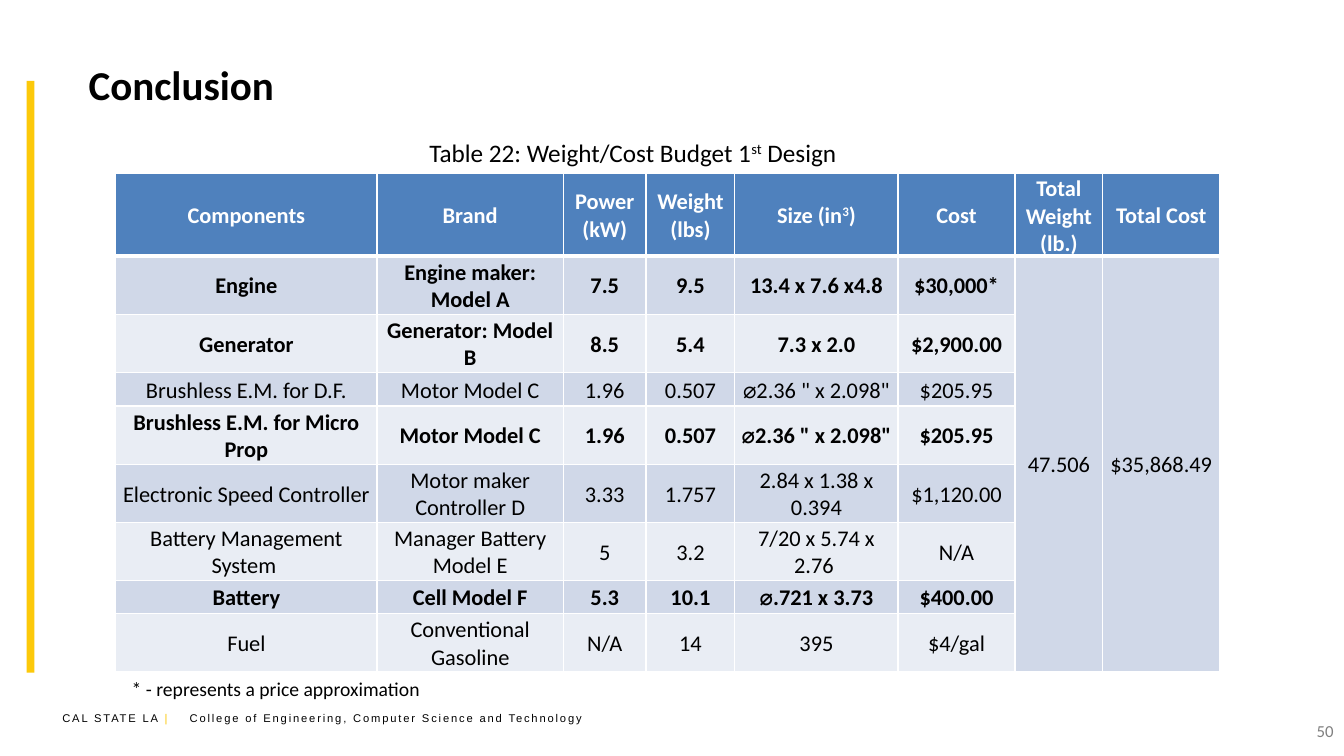
from dataclasses import dataclass
from lxml.etree import SubElement
from pptx import Presentation
from pptx.dml.color import RGBColor
from pptx.enum.shapes import MSO_SHAPE
from pptx.enum.text import MSO_ANCHOR, PP_ALIGN
from pptx.oxml.ns import qn
from pptx.util import Cm, Pt

TITLE = "Conclusion"
CAPTION = "Table 22: Weight/Cost Budget 1^st^ Design"
FOOTNOTE = "* - represents a price approximation"
FOOTER = ["CAL STATE LA ", "|\t", "College of Engineering, Computer Science and Technology"]
PAGE = "50"
HEADERS = ["Components", "Brand", "Power (kW)", "Weight (lbs)", "Size (in^3^)", "Cost",
           "Total Weight (lb.)", "Total Cost"]
COMPONENTS = [
    ["Engine", "Engine maker: Model A", "7.5", "9.5", "13.4 x 7.6 x4.8", "$30,000*"],
    ["Generator", "Generator: Model B", "8.5", "5.4", "7.3 x 2.0", "$2,900.00"],
    ["Brushless E.M. for D.F.", "Motor Model C", "1.96", "0.507", '⌀2.36 " x 2.098"', "$205.95"],
    ["Brushless E.M. for Micro Prop", "Motor Model C", "1.96", "0.507", '⌀2.36 " x 2.098"', "$205.95"],
    ["Electronic Speed Controller", "Motor maker Controller D", "3.33", "1.757", "2.84 x 1.38 x 0.394", "$1,120.00"],
    ["Battery Management System ", "Manager Battery Model E", "5", "3.2", "7/20 x 5.74 x 2.76 ", "N/A"],
    ["Battery", "Cell Model F", "5.3", "10.1", "⌀.721 x 3.73", "$400.00"],
    ["Fuel", "Conventional Gasoline", "N/A", "14", "395", "$4/gal"],
]
TOTALS = ["47.506", "$35,868.49"]
BOLD_COMPONENTS = {"Engine", "Generator", "Brushless E.M. for Micro Prop", "Battery"}
COL_WIDTHS = [6.58, 4.7, 2.08, 2.24, 4.11, 2.95, 2.21, 2.95]
ROW_HEIGHTS = [1.98, 1.47, 1.47, 0.84, 1.47, 1.47, 1.45, 0.84, 1.47]


@dataclass(frozen=True)
class Theme:
    font: str = "Calibri"
    footer_font: str = "Arial"
    ink: str = "000000"
    paper: str = "FFFFFF"
    gold: str = "FCC90A"
    grey: str = "808080"
    header: str = "4F81BD"
    bands: tuple = ("D0D8E8", "E9EDF4")
    title_size: float = 29.3
    caption_size: float = 18
    cell_size: float = 16
    note_size: float = 14
    page_size: float = 12
    footer_size: float = 8


T = Theme()


def style(r, size, color=T.ink, bold=False, font=T.font):
    r.font.name, r.font.size, r.font.bold = font, Pt(size), bold
    r.font.color.rgb = RGBColor.from_string(color)


def write(p, text, size, color=T.ink, bold=False):
    for i, part in enumerate(text.split("^")):
        r = p.add_run()
        r.text = part
        style(r, size, color, bold)
        if i % 2:
            r._r.get_or_add_rPr().set("baseline", "30000")


def add_text(s, left, top, width, height):
    tf = s.shapes.add_textbox(Cm(left), Cm(top), Cm(width), Cm(height)).text_frame
    tf.word_wrap = True
    return tf.paragraphs[0]


def set_borders(cell, top, bottom):
    tcPr = cell._tc.get_or_add_tcPr()
    for side, width in (("L", 1), ("R", 1), ("T", top), ("B", bottom)):
        ln = SubElement(tcPr, qn(f"a:ln{side}"), w=str(Pt(width)))
        SubElement(SubElement(ln, qn("a:solidFill")), qn("a:srgbClr"), val=T.paper)


def fill_cell(cell, row, text, bold):
    is_header = row == 0
    set_borders(cell, 3 if row == 1 else 1, 3 if is_header else 1)
    cell.fill.solid()
    cell.fill.fore_color.rgb = RGBColor.from_string(T.header if is_header else T.bands[(row - 1) % 2])
    cell.margin_left = cell.margin_right = cell.margin_top = Cm(0.05)
    cell.margin_bottom = 0
    cell.vertical_anchor = MSO_ANCHOR.MIDDLE
    p = cell.text_frame.paragraphs[0]
    p.alignment = PP_ALIGN.CENTER
    if text:
        write(p, text, T.cell_size, T.paper if is_header else T.ink, bold)


def add_budget(s):
    table = s.shapes.add_table(len(ROW_HEIGHTS), len(COL_WIDTHS), Cm(2.92), Cm(4.37),
                               Cm(sum(COL_WIDTHS)), Cm(sum(ROW_HEIGHTS))).table
    for col, width in zip(table.columns, COL_WIDTHS):
        col.width = Cm(width)
    for row, height in zip(table.rows, ROW_HEIGHTS):
        row.height = Cm(height)
    blanks = [""] * len(TOTALS)
    rows = [HEADERS] + [c + (blanks if i else TOTALS) for i, c in enumerate(COMPONENTS)]
    for i, values in enumerate(rows):
        for j, text in enumerate(values):
            is_total = j >= len(COMPONENTS[0])
            bold = i == 0 or (values[0] in BOLD_COMPONENTS and not is_total)
            fill_cell(table.cell(i, j), i, text, bold)
    for j in range(len(COMPONENTS[0]), len(HEADERS)):
        table.cell(1, j).merge(table.cell(len(COMPONENTS), j))


def add_footer(s):
    p = add_text(s, 1.32, 17.81, 14.05, 0.61)
    tabs = SubElement(p._p.get_or_add_pPr(), qn("a:tabLst"))
    SubElement(tabs, qn("a:tab"), pos=str(Cm(3.21)), algn="l")
    for text, color in zip(FOOTER, (T.ink, T.gold, T.ink)):
        r = p.add_run()
        r.text = text
        style(r, T.footer_size, color, font=T.footer_font)
        r._r.get_or_add_rPr().set("spc", "130")


def main():
    prs = Presentation()
    prs.slide_width, prs.slide_height = Cm(33.87), Cm(19.05)
    s = prs.slides.add_slide(prs.slide_layouts[5])

    add_footer(s)
    bar = s.shapes.add_shape(MSO_SHAPE.RECTANGLE, Cm(0.67), Cm(2.04), Cm(0.2), Cm(14.91))
    bar.shadow.inherit = False
    bar.fill.solid()
    bar.fill.fore_color.rgb = RGBColor.from_string(T.gold)
    bar.line.fill.background()

    title = s.shapes.title
    title.left, title.top, title.width, title.height = Cm(1.98), Cm(0.89), Cm(18.77), Cm(2.44)
    tf = title.text_frame
    tf.text = TITLE
    tf.vertical_anchor = MSO_ANCHOR.MIDDLE
    tf.paragraphs[0].alignment = PP_ALIGN.LEFT
    style(tf.paragraphs[0].runs[0], T.title_size, bold=True)

    write(add_text(s, 10.57, 3.33, 11.79, 1.02), CAPTION, T.caption_size)
    page = add_text(s, 25.96, 18.03, 7.9, 1.02)
    page.alignment = PP_ALIGN.RIGHT
    write(page, PAGE, T.page_size, T.grey)
    add_budget(s)
    write(add_text(s, 3.07, 16.94, 9.75, 0.86), FOOTNOTE, T.note_size)
    prs.save("out.pptx")


if __name__ == "__main__":
    main()
